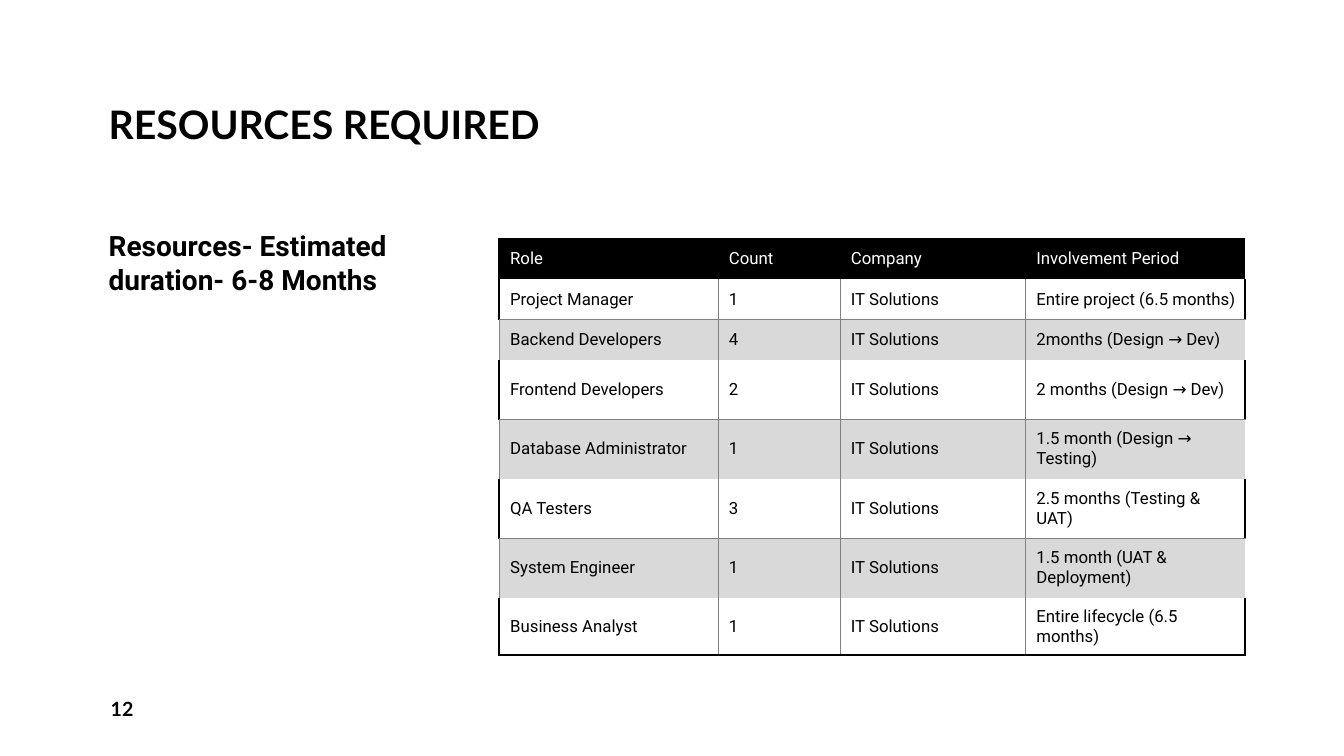
from dataclasses import dataclass

from lxml import etree
from pptx import Presentation
from pptx.dml.color import RGBColor
from pptx.enum.text import MSO_ANCHOR
from pptx.oxml.ns import qn
from pptx.util import Inches, Pt

TOP, MIDDLE, BOTTOM = MSO_ANCHOR.TOP, MSO_ANCHOR.MIDDLE, MSO_ANCHOR.BOTTOM


@dataclass(frozen=True)
class Theme:
    black: str = "000000"
    white: str = "FFFFFF"
    band: str = "D9D9D9"
    grid: str = "808080"
    heading_font: str = "Lato"
    body_font: str = "Roboto"
    title_size: int = 28
    body_size: int = 20
    number_size: int = 14
    table_size: int = 12
    thick: float = 1.5
    thin: float = 0.5


THEME = Theme()
FRAME_LINE = (THEME.black, THEME.thick)
GRID_LINE = (THEME.grid, THEME.thin)

COLUMN_WIDTHS = [2.17, 1.21, 1.84, 2.18]
ROW_HEIGHTS = [0.4, 0.4, 0.4, 0.59, 0.59, 0.59, 0.59, 0.57]
COMPANY = "IT Solutions"
ROLES = [
    ("Project Manager", "1", "Entire project (6.5 months)"),
    ("Backend Developers", "4", "2months (Design → Dev)"),
    ("Frontend Developers", "2", "2 months (Design → Dev)"),
    ("Database Administrator", "1", "1.5 month (Design → Testing)"),
    ("QA Testers", "3", "2.5 months (Testing & UAT)"),
    ("System Engineer", "1", "1.5 month (UAT & Deployment)"),
    ("Business Analyst", "1", "Entire lifecycle (6.5 months)"),
]
ROWS = [("Role", "Count", "Company", "Involvement Period")]
ROWS += [(role, count, COMPANY, period) for role, count, period in ROLES]


def set_font(paragraph, color, **values):
    for name, value in values.items():
        setattr(paragraph.font, name, value)
    paragraph.font.color.rgb = RGBColor.from_string(color)


def add_text(slide, box, text, font, size, anchor, **spacing):
    shape = slide.shapes.add_textbox(*map(Inches, box))
    frame = shape.text_frame
    frame.word_wrap = True
    frame.vertical_anchor = anchor
    paragraph = frame.paragraphs[0]
    paragraph.text = text
    for name, value in spacing.items():
        setattr(paragraph, name, value)
    set_font(paragraph, THEME.black, name=font, size=Pt(size), bold=True)


def vertical_line(row, edge):
    outer = edge in (0, len(COLUMN_WIDTHS))
    if row == 0:
        return FRAME_LINE if edge == 0 else None
    if row % 2:
        return FRAME_LINE if outer else GRID_LINE
    return None if edge == len(COLUMN_WIDTHS) else GRID_LINE


def horizontal_line(edge):
    if edge in (0, len(ROWS)):
        return FRAME_LINE
    return None if edge % 2 else GRID_LINE


def draw_border(cell, tag, line):
    border = etree.SubElement(cell._tc.get_or_add_tcPr(), qn(tag))
    if line is None:
        etree.SubElement(border, qn("a:noFill"))
        return
    color, width = line
    border.set("w", str(Pt(width)))
    fill = etree.SubElement(border, qn("a:solidFill"))
    etree.SubElement(fill, qn("a:srgbClr")).set("val", color)


def format_cell(cell, row, column, text):
    cell.text = text
    margins = {
        "margin_left": 0.11,
        "margin_right": 0.08,
        "margin_top": 0.08,
        "margin_bottom": 0.08,
    }
    for name, value in margins.items():
        setattr(cell, name, Inches(value))
    cell.vertical_anchor = MIDDLE
    set_font(
        cell.text_frame.paragraphs[0],
        THEME.black if row else THEME.white,
        name=THEME.body_font,
        size=Pt(THEME.table_size),
        bold=False,
    )
    borders = {
        "a:lnL": vertical_line(row, column),
        "a:lnR": vertical_line(row, column + 1),
        "a:lnT": horizontal_line(row),
        "a:lnB": horizontal_line(row + 1),
    }
    for tag, line in borders.items():
        draw_border(cell, tag, line)
    if row % 2:
        cell.fill.background()
    else:
        cell.fill.solid()
        cell.fill.fore_color.rgb = RGBColor.from_string(THEME.band if row else THEME.black)


def add_resource_table(slide, left, top):
    box = (left, top, sum(COLUMN_WIDTHS), sum(ROW_HEIGHTS))
    table = slide.shapes.add_table(
        len(ROWS), len(COLUMN_WIDTHS), *map(Inches, box)
    ).table
    table.horz_banding = False
    for column, width in zip(table.columns, COLUMN_WIDTHS):
        column.width = Inches(width)
    for row, height in zip(table.rows, ROW_HEIGHTS):
        row.height = Inches(height)
    for row, texts in enumerate(ROWS):
        for column, text in enumerate(texts):
            format_cell(table.cell(row, column), row, column, text)


def add_resources_slide(presentation):
    slide = presentation.slides.add_slide(presentation.slide_layouts[6])
    add_text(slide, (0.98, 0.15, 6.75, 1.37), "RESOURCES REQUIRED",
             THEME.heading_font, THEME.title_size, BOTTOM, line_spacing=0.9)
    add_text(slide, (0.98, 2.22, 3.3, 4.27), "Resources- Estimated duration- 6-8 Months",
             THEME.body_font, THEME.body_size, TOP, space_after=Pt(6))
    add_text(slide, (1, 6.83, 1.3, 0.4), "12",
             THEME.heading_font, THEME.number_size, MIDDLE, space_after=Pt(6))
    add_resource_table(slide, 4.95, 2.37)


def main():
    presentation = Presentation()
    presentation.slide_width = Inches(13.33)
    presentation.slide_height = Inches(7.5)
    add_resources_slide(presentation)
    presentation.save("out.pptx")


if __name__ == "__main__":
    main()
